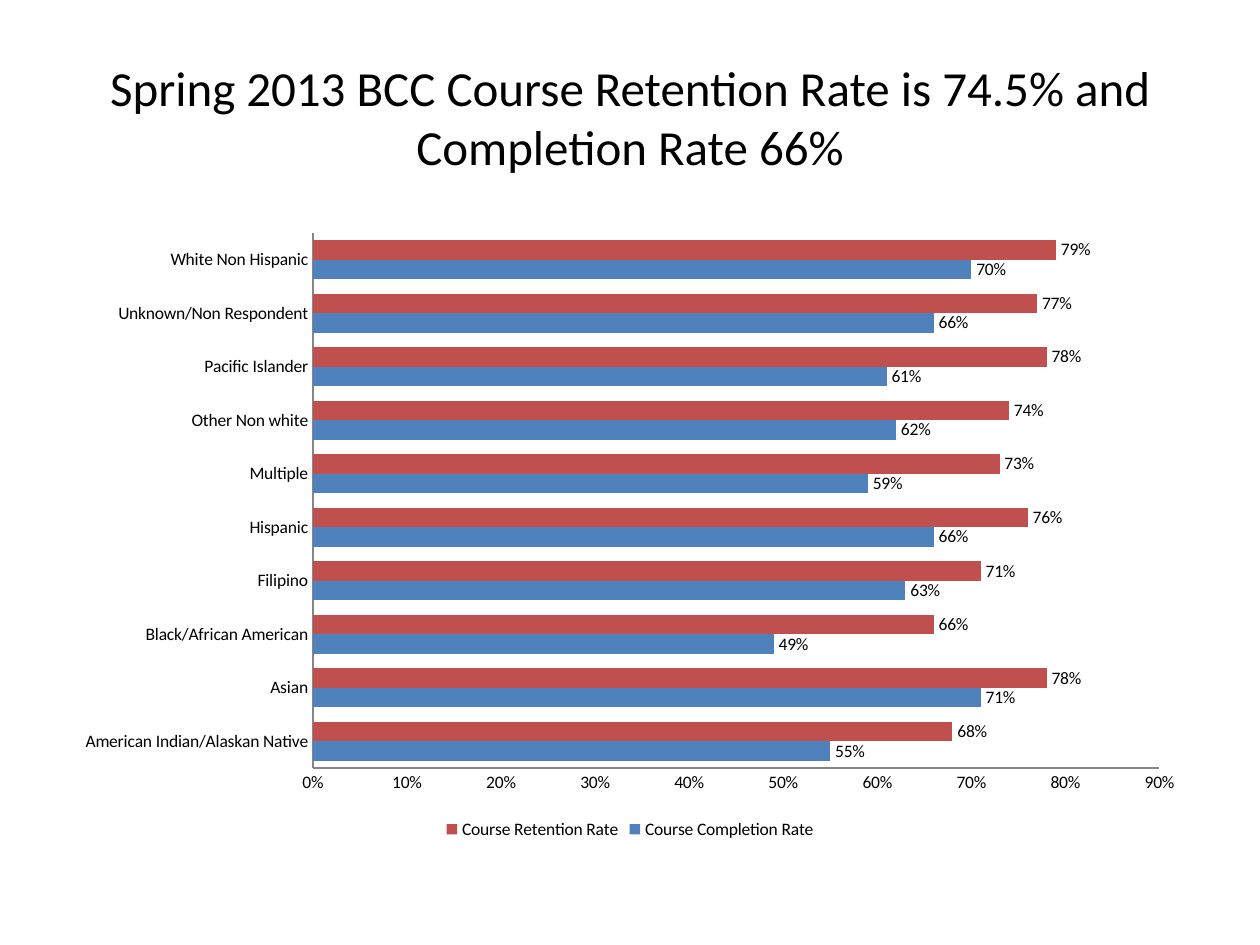
from pptx import Presentation
from pptx.chart.data import CategoryChartData
from pptx.dml.color import RGBColor
from pptx.enum.chart import XL_CHART_TYPE as CT, XL_LABEL_POSITION as LP
from pptx.enum.chart import XL_LEGEND_POSITION as LEG, XL_TICK_MARK as TM
from pptx.enum.text import MSO_ANCHOR, PP_ALIGN
from pptx.util import Inches, Pt


def rgb(color):
    return RGBColor.from_string(color)


def set_font(font, size):
    for name, value in {"name": "Calibri", "size": Pt(size), "bold": False}.items():
        setattr(font, name, value)
    font.color.rgb = rgb("000000")


prs = Presentation()
prs.slide_width, prs.slide_height = Inches(10), Inches(7.5)
s = prs.slides.add_slide(prs.slide_layouts[6])

sp = s.shapes.add_textbox(Inches(0.5), Inches(0.3), Inches(9), Inches(1.25))
tf = sp.text_frame
for name, value in {"word_wrap": True, "vertical_anchor": MSO_ANCHOR.MIDDLE}.items():
    setattr(tf, name, value)
p = tf.paragraphs[0]
p.alignment = PP_ALIGN.CENTER
r = p.add_run()
r.text = "Spring 2013 BCC Course Retention Rate is 74.5% and Completion Rate 66%"
set_font(r.font, 28)

rates = [
    ("American Indian/Alaskan Native", 0.55, 0.68),
    ("Asian", 0.71, 0.78),
    ("Black/African American", 0.49, 0.66),
    ("Filipino", 0.63, 0.71),
    ("Hispanic", 0.66, 0.76),
    ("Multiple", 0.59, 0.73),
    ("Other Non white", 0.62, 0.74),
    ("Pacific Islander", 0.61, 0.78),
    ("Unknown/Non Respondent", 0.66, 0.77),
    ("White Non Hispanic", 0.7, 0.79),
]
groups, completion, retention = zip(*rates)
data = CategoryChartData(number_format="0%")
data.categories = groups
data.add_series("Course Completion Rate", completion)
data.add_series("Course Retention Rate", retention)

chart = s.shapes.add_chart(
    CT.BAR_CLUSTERED, Inches(0.5), Inches(1.75), Inches(9), Inches(4.95), data
).chart
set_font(chart.font, 10)
for name, value in {"has_title": False, "has_legend": True}.items():
    setattr(chart, name, value)
for name, value in {"position": LEG.BOTTOM, "include_in_layout": False}.items():
    setattr(chart.legend, name, value)

plot = chart.plots[0]
for name, value in {"gap_width": 75, "overlap": 0, "vary_by_categories": False}.items():
    setattr(plot, name, value)

axis_format = {
    "major_tick_mark": TM.NONE,
    "minor_tick_mark": TM.NONE,
    "has_major_gridlines": False,
}
for axis in (chart.category_axis, chart.value_axis):
    for name, value in axis_format.items():
        setattr(axis, name, value)
    axis.format.line.color.rgb = rgb("868686")
    axis.format.line.width = Pt(1)

scale = {"minimum_scale": 0, "maximum_scale": 0.9, "major_unit": 0.1}
for name, value in scale.items():
    setattr(chart.value_axis, name, value)

label_format = {
    "show_value": True,
    "number_format": "0%",
    "number_format_is_linked": False,
    "position": LP.OUTSIDE_END,
}
for series, color in zip(plot.series, ("4F81BD", "C0504D")):
    series.format.fill.solid()
    series.format.fill.fore_color.rgb = rgb(color)
    for name, value in label_format.items():
        setattr(series.data_labels, name, value)

labels = chart.value_axis.tick_labels
for name, value in {"number_format": "0%", "number_format_is_linked": False}.items():
    setattr(labels, name, value)

prs.save("out.pptx")
